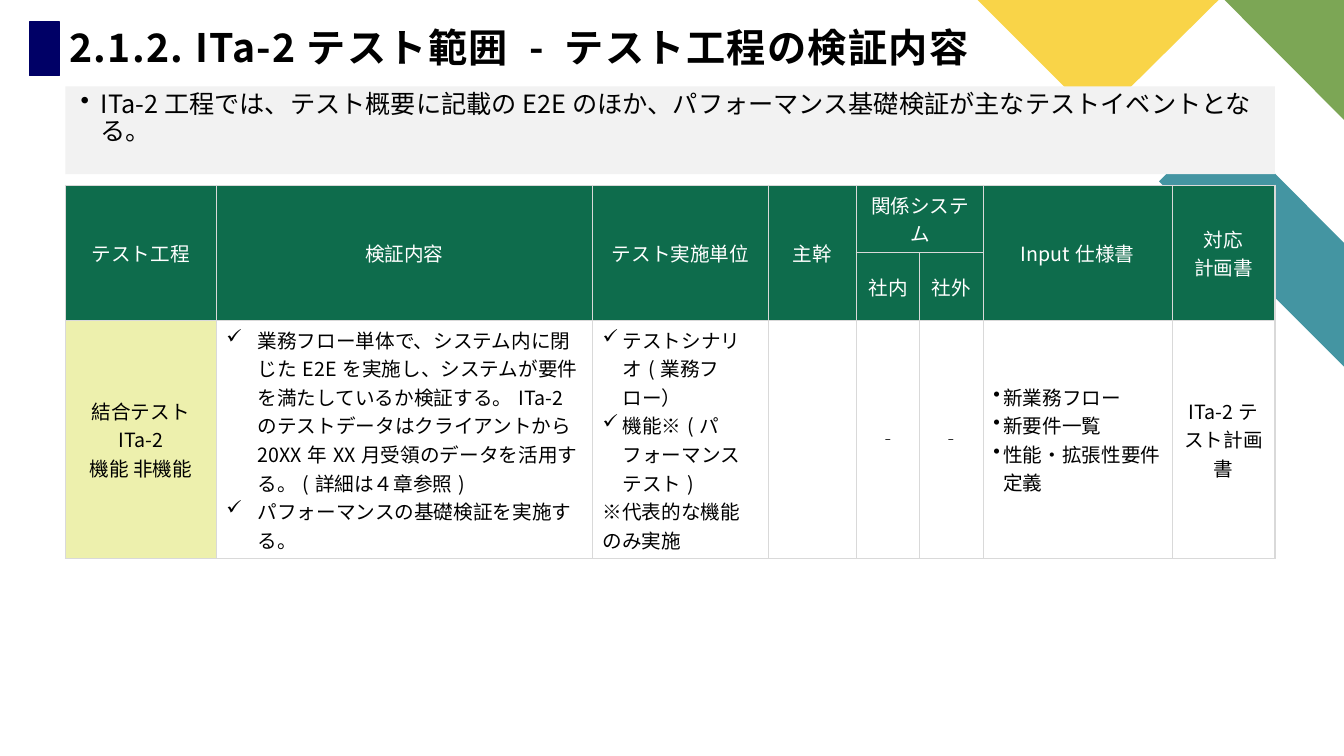
from dataclasses import dataclass
from lxml.etree import SubElement
from pptx import Presentation
from pptx.dml.color import RGBColor
from pptx.enum.shapes import MSO_SHAPE
from pptx.enum.text import MSO_ANCHOR, PP_ALIGN
from pptx.oxml.ns import qn
from pptx.util import Cm, Pt


@dataclass(frozen=True)
class Theme:
    font: str = "Noto Sans CJK JP"
    title_size: int = 28
    lead_size: int = 18
    table_size: int = 14
    ink: str = "000000"
    white: str = "FFFFFF"
    navy: str = "000066"
    panel: str = "F2F2F2"
    header: str = "0E6C4C"
    phase: str = "EDF0AD"
    border: str = "D9D9D9"
    teal: str = "4495A2"
    green: str = "7CA655"
    yellow: str = "F9D448"


THEME = Theme()

# Content
TITLE = "2.1.2. ITa-2テスト範囲 - テスト工程の検証内容"
LEAD = ["ITa-2工程では、テスト概要に記載のE2Eのほか、パフォーマンス基礎検証が主なテストイベントとなる。"]
# Each header: row, column, rows spanned, columns spanned, lines
HEADERS = [
    (0, 0, 2, 1, ["テスト工程"]),
    (0, 1, 2, 1, ["検証内容"]),
    (0, 2, 2, 1, ["テスト実施単位"]),
    (0, 3, 2, 1, ["主幹"]),
    (0, 4, 1, 2, ["関係システム"]),
    (1, 4, 1, 1, ["社内"]),
    (1, 5, 1, 1, ["社外"]),
    (0, 6, 2, 1, ["Input仕様書"]),
    (0, 7, 2, 1, ["対応", "計画書"]),
]
# Each cell of the test row: bullet, hanging indent in cm, lines
DETAILS = [
    (None, 0, ["結合テスト", "ITa-2", "機能 非機能"]),
    ("✓", 0.79, [
        "業務フロー単体で、システム内に閉じたE2Eを実施し、システムが要件を満たしているか検証する。"
        "ITa-2のテストデータはクライアントから20XX年XX月受領のデータを活用する。(詳細は４章参照)",
        "パフォーマンスの基礎検証を実施する。",
    ]),
    ("✓", 0.51, ["テストシナリオ(業務フロー）", "機能※(パフォーマンステスト)", "※代表的な機能のみ実施"]),
    (None, 0, []),
    (None, 0, ["‐"]),
    (None, 0, ["‐"]),
    ("•", 0.25, ["新業務フロー", "新要件一覧", "性能・拡張性要件定義"]),
    (None, 0, ["ITa-2テスト計画書"]),
]
NOTE_MARK = "※"

# Layout in cm
PAGE_WIDTH, PAGE_HEIGHT = 33.87, 19.05
LEFT, WIDTH = 1.65, 30.48
COLUMNS = [3.8, 9.48, 4.44, 2.21, 1.6, 1.6, 4.76, 2.59]
ROWS = [1.7, 1.7, 6]
DECOR = [
    (THEME.teal, [(33.87, 9.24), (33.87, 6.12), (30.78, 3.02), (29.21, 4.57)]),
    (THEME.green, [(33.87, 3.02), (33.87, 0), (30.86, 0)]),
    (THEME.yellow, [(24.64, 0), (27.66, 3.02), (30.71, 0)]),
]


def color(code):
    return RGBColor.from_string(code)


def write(frame, lines, size, ink=THEME.ink, bold=False, align=PP_ALIGN.LEFT, bullet=None,
          margin=0, hang=0, line_spacing=None, before=None, tracking=None):
    frame.word_wrap = True
    for index, line in enumerate(lines):
        para = frame.paragraphs[0] if index == 0 else frame.add_paragraph()
        para.alignment = align
        if line_spacing:
            para.line_spacing = line_spacing
        if before:
            para.space_before = Pt(before)
        if bullet and not line.startswith(NOTE_MARK):
            properties = para._p.get_or_add_pPr()
            properties.set("marL", str(Cm(margin)))
            properties.set("indent", str(-Cm(hang)))
            SubElement(properties, qn("a:buChar"), char=bullet)
        span = para.add_run()
        span.text = line
        span.font.size = Pt(size)
        span.font.bold = bold
        span.font.color.rgb = color(ink)
        span.font.name = THEME.font
        run_properties = span._r.get_or_add_rPr()
        SubElement(run_properties, qn("a:ea"), typeface=THEME.font)
        if tracking:
            run_properties.set("spc", str(tracking * 100))


def paint(shape, fill, line=None):
    shape.shadow.inherit = False
    shape.fill.solid()
    shape.fill.fore_color.rgb = color(fill)
    if line:
        shape.line.color.rgb = color(line)
        shape.line.width = Pt(1)
    else:
        shape.line.fill.background()


def style_cell(cell, fill):
    cell.vertical_anchor = MSO_ANCHOR.MIDDLE
    properties = cell._tc.get_or_add_tcPr()
    for side in ("lnL", "lnR", "lnT", "lnB"):
        edge = SubElement(properties, qn(f"a:{side}"), w=str(Pt(1)))
        solid = SubElement(edge, qn("a:solidFill"))
        SubElement(solid, qn("a:srgbClr"), val=THEME.border)
    cell.fill.solid()
    cell.fill.fore_color.rgb = color(fill)


def add_decor(page):
    for fill, points in DECOR:
        corners = [(Cm(x), Cm(y)) for x, y in points]
        builder = page.shapes.build_freeform(*corners[0])
        builder.add_line_segments(corners[1:], close=True)
        paint(builder.convert_to_shape(), fill)


def add_heading(page):
    marker = page.shapes.add_shape(MSO_SHAPE.RECTANGLE, Cm(0.74), Cm(0.56), Cm(0.76), Cm(1.35))
    paint(marker, THEME.navy, THEME.navy)
    box = page.shapes.add_textbox(Cm(LEFT), Cm(0.56), Cm(WIDTH), Cm(1.35))
    frame = box.text_frame
    frame.margin_left = frame.margin_right = frame.margin_bottom = Cm(0.1)
    frame.margin_top = Cm(0.2)
    frame.vertical_anchor = MSO_ANCHOR.MIDDLE
    write(frame, [TITLE], THEME.title_size, bold=True, line_spacing=0.8, tracking=1)


def add_lead(page):
    panel = page.shapes.add_shape(MSO_SHAPE.RECTANGLE, Cm(LEFT), Cm(2.18), Cm(WIDTH), Cm(2.21))
    paint(panel, THEME.panel)
    panel.text_frame.vertical_anchor = MSO_ANCHOR.TOP
    write(panel.text_frame, LEAD, THEME.lead_size, bullet="•", margin=0.64, hang=0.51,
          line_spacing=0.9, before=10)


def add_test_table(page):
    table = page.shapes.add_table(len(ROWS), len(COLUMNS), Cm(LEFT), Cm(4.67),
                                  Cm(WIDTH), Cm(sum(ROWS))).table
    table.first_row = table.horz_banding = False
    for column, width in zip(table.columns, COLUMNS):
        column.width = Cm(width)
    for row, height in zip(table.rows, ROWS):
        row.height = Cm(height)

    # Fills and borders
    detail_row = len(ROWS) - 1
    for row in range(len(ROWS)):
        for column in range(len(COLUMNS)):
            body_fill = THEME.phase if column == 0 else THEME.white
            style_cell(table.cell(row, column), body_fill if row == detail_row else THEME.header)

    # Header and test row text
    for row, column, down, across, lines in HEADERS:
        cell = table.cell(row, column)
        if down * across > 1:
            cell.merge(table.cell(row + down - 1, column + across - 1))
        write(cell.text_frame, lines, THEME.table_size, ink=THEME.white, align=PP_ALIGN.CENTER)
    for column, (bullet, hang, lines) in enumerate(DETAILS):
        write(table.cell(detail_row, column).text_frame, lines, THEME.table_size, bullet=bullet,
              margin=hang, hang=hang, align=PP_ALIGN.LEFT if bullet else PP_ALIGN.CENTER)


def main():
    deck = Presentation()
    deck.slide_width, deck.slide_height = Cm(PAGE_WIDTH), Cm(PAGE_HEIGHT)
    page = deck.slides.add_slide(deck.slide_layouts[6])
    add_decor(page)
    add_heading(page)
    add_lead(page)
    add_test_table(page)
    deck.save("out.pptx")


if __name__ == "__main__":
    main()
